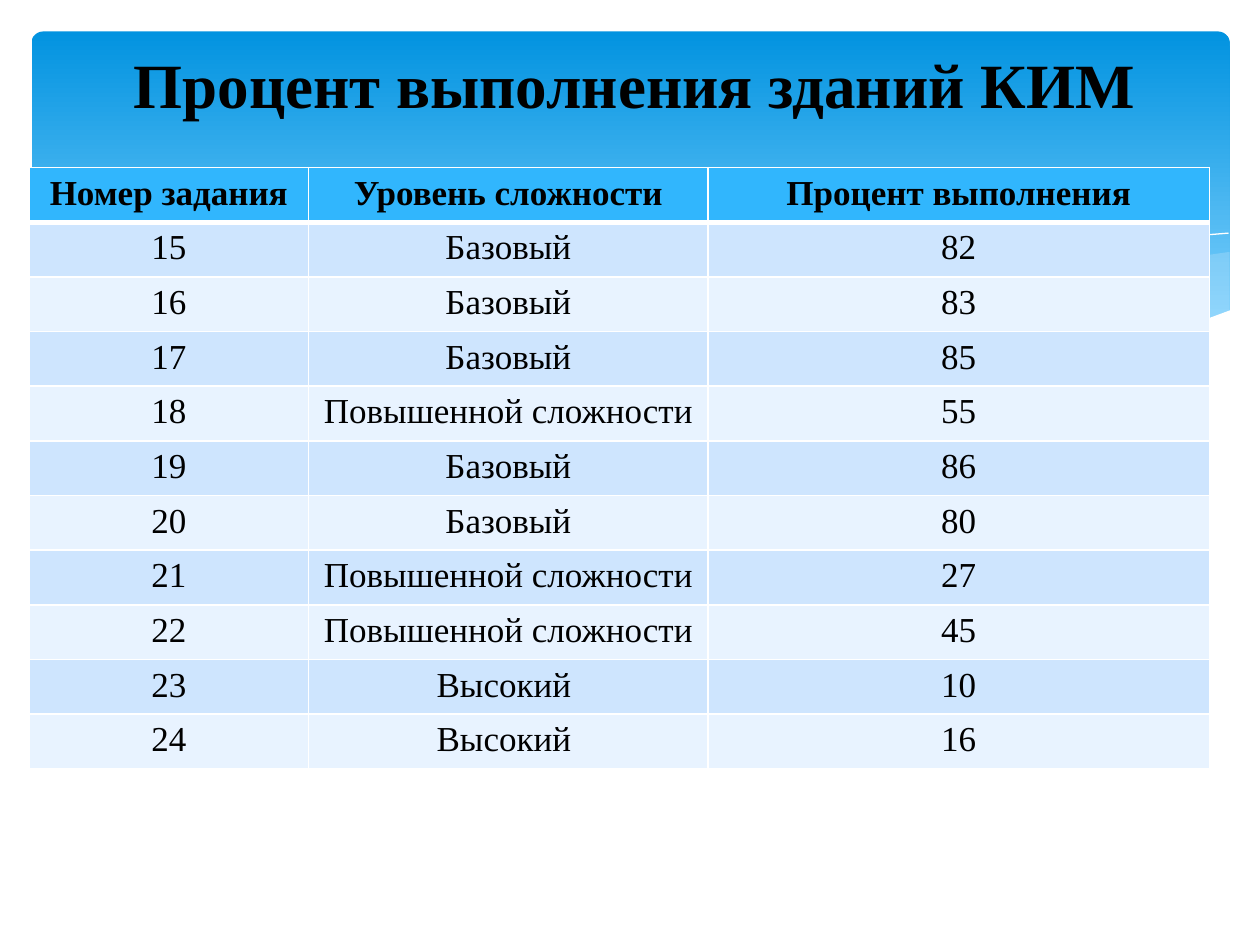
from lxml import etree
from pptx import Presentation
from pptx.dml.color import RGBColor
from pptx.enum.shapes import MSO_SHAPE
from pptx.enum.text import MSO_ANCHOR, PP_ALIGN
from pptx.oxml.ns import qn
from pptx.util import Inches, Pt

ROUNDED = MSO_SHAPE.ROUNDED_RECTANGLE
MIDDLE = MSO_ANCHOR.MIDDLE
CENTER = PP_ALIGN.CENTER

WHITE = RGBColor(0xFF, 0xFF, 0xFF)
BLACK = RGBColor(0x00, 0x00, 0x00)
DEEP_BLUE = RGBColor(0x02, 0x93, 0xE0)
SKY_BLUE = RGBColor(0x83, 0xD3, 0xFE)
WAVE_BLUE = RGBColor(0xC6, 0xE7, 0xFC)
HEADER_BLUE = RGBColor(0x31, 0xB6, 0xFD)
BANDS = (RGBColor(0xCE, 0xE5, 0xFE), RGBColor(0xE8, 0xF3, 0xFF))
FONT = "Times New Roman"

# Wave outlines, in inches from the corner of the wave box
RIGHT_RIBBON = [
    (9.52, 0.16), (9.25, 0.2), (8.98, 0.26), (8.38, 0.39), (7.56, 0.58),
    (6.83, 0.73), (6.38, 0.81), (6.82, 0.87), (7.34, 0.92), (7.91, 0.94),
    (8.49, 0.9), (8.98, 0.81), (9.26, 0.73), (9.53, 0.63), (9.53, 0.16)]
CENTRE_RIBBON = [
    (8.7, 0.89), (8.14, 0.81), (7.52, 0.7), (6.83, 0.56), (6.06, 0.38),
    (5.46, 0.24), (4.91, 0.14), (4.19, 0.05), (3.57, 0.01), (3.05, 0.03),
    (2.63, 0.07), (3.19, 0.15), (3.81, 0.27), (4.68, 0.48), (5.43, 0.64),
    (6.11, 0.77), (6.72, 0.86), (7.25, 0.92), (7.84, 0.94), (8.34, 0.93)]
LONG_CURVE = [
    (2.86, 0.11), (3.21, 0.06), (3.64, 0.03), (4.1, 0.03), (4.66, 0.06),
    (5.33, 0.13), (6.13, 0.24), (7.04, 0.42), (8.08, 0.67), (8.84, 0.88)]
SHORT_CURVE = [
    (5.9, 0.73), (6.49, 0.57), (7.25, 0.39), (8.13, 0.2), (8.72, 0.1),
    (9.15, 0.04), (9.52, 0.01)]
WHITE_WAVE = [
    (9.54, 0.62), (9.27, 0.72), (8.97, 0.81), (8.52, 0.89), (8, 0.93),
    (7.55, 0.92), (7.03, 0.88), (6.45, 0.81), (5.8, 0.7), (5.06, 0.55),
    (4.24, 0.36), (3.42, 0.18), (2.69, 0.06), (2.07, 0.01), (1.54, 0),
    (1.09, 0.02), (0.72, 0.07), (0.44, 0.13), (0.23, 0.19), (0, 0.29),
    (0, 1.45), (9.54, 1.45)]

HEADINGS = ("Номер задания", "Уровень сложности", "Процент выполнения")
BASIC, RAISED, HIGH = "Базовый", "Повышенной сложности", "Высокий "
RESULTS = [
    (15, BASIC, 82), (16, BASIC, 83), (17, BASIC, 85), (18, RAISED, 55),
    (19, BASIC, 86), (20, BASIC, 80), (21, RAISED, 27), (22, RAISED, 45),
    (23, HIGH, 10), (24, HIGH, 16)]
COLUMN_WIDTHS = (2.22, 3.17, 3.98)


def style_text(para, size, bold):
    para.alignment = CENTER
    para.font.name = FONT
    para.font.size = Pt(size)
    para.font.bold = bold
    para.font.color.rgb = BLACK


def add_banner(page, left, top, width, height):
    banner = page.shapes.add_shape(ROUNDED, left, top, width, height)
    banner.adjustments[0] = 0.034
    banner.shadow.inherit = False
    banner.line.fill.background()
    banner.fill.gradient()
    banner.fill.gradient_angle = 270
    stops = banner.fill.gradient_stops
    for stop, color, position in zip(stops, (DEEP_BLUE, SKY_BLUE), (0, 0.9)):
        stop.color.rgb = color
        stop.position = position


def add_curve(page, left, top, points, closed):
    corners = [(left + Inches(x), top + Inches(y)) for x, y in points]
    builder = page.shapes.build_freeform(*corners[0])
    builder.add_line_segments(corners[1:], close=closed)
    curve = builder.convert_to_shape()
    curve.shadow.inherit = False
    return curve


def add_waves(page, left, top):
    # Filled waves, with opacity in percent
    def add_ribbon(points, color, opacity):
        ribbon = add_curve(page, left, top, points, True)
        ribbon.line.fill.background()
        ribbon.fill.solid()
        ribbon.fill.fore_color.rgb = color
        if opacity < 100:
            tint = ribbon.fill._xPr.find(qn("a:solidFill"))[0]
            etree.SubElement(tint, qn("a:alpha"), val=str(opacity * 1000))

    add_ribbon(RIGHT_RIBBON, WAVE_BLUE, 29)
    add_ribbon(CENTRE_RIBBON, WAVE_BLUE, 40)
    # Hairline curves
    for points in (LONG_CURVE, SHORT_CURVE):
        curve = add_curve(page, left, top, points, False)
        curve.fill.background()
        curve.line.color.rgb = WHITE
        curve.line.width = Pt(0)
    add_ribbon(WHITE_WAVE, WHITE, 100)


def add_title(page, left, top, width, height):
    title = page.shapes.add_textbox(left, top, width, height)
    frame = title.text_frame
    frame.word_wrap = True
    frame.vertical_anchor = MIDDLE
    frame.text = "Процент выполнения зданий КИМ"
    style_text(frame.paragraphs[0], 36, True)


def set_borders(cell, top_width, bottom_width):
    properties = cell._tc.get_or_add_tcPr()
    widths = {"a:lnL": 1, "a:lnR": 1, "a:lnT": top_width, "a:lnB": bottom_width}
    for index, (tag, width) in enumerate(widths.items()):
        line = etree.Element(qn(tag), w=str(Pt(width)))
        fill = etree.SubElement(line, qn("a:solidFill"))
        etree.SubElement(fill, qn("a:srgbClr"), val=str(WHITE))
        properties.insert(index, line)


def add_results_table(page, left, top, width, height):
    rows = [HEADINGS] + RESULTS
    table = page.shapes.add_table(
        len(rows), len(HEADINGS), left, top, width, height).table
    for column, column_width in zip(table.columns, COLUMN_WIDTHS):
        column.width = Inches(column_width)
    for row_index, values in enumerate(rows):
        is_header = row_index == 0
        for column_index, value in enumerate(values):
            cell = table.cell(row_index, column_index)
            cell.text = str(value)
            style_text(cell.text_frame.paragraphs[0], 20, is_header)
            cell.fill.solid()
            cell.fill.fore_color.rgb = (
                HEADER_BLUE if is_header else BANDS[(row_index - 1) % 2])
            set_borders(cell, 3 if row_index == 1 else 1, 3 if is_header else 1)


def main():
    deck = Presentation()
    deck.slide_width, deck.slide_height = Inches(10), Inches(7.5)
    page = deck.slides.add_slide(deck.slide_layouts[6])
    add_banner(page, Inches(0.25), Inches(0.25), Inches(9.51), Inches(2.7))
    add_waves(page, Inches(0.23), Inches(1.84))
    add_title(page, Inches(0.31), Inches(0.31), Inches(9.45), Inches(0.71))
    add_results_table(
        page, Inches(0.23), Inches(1.33), Inches(9.37), Inches(4.77))
    deck.save("out.pptx")


if __name__ == "__main__":
    main()
